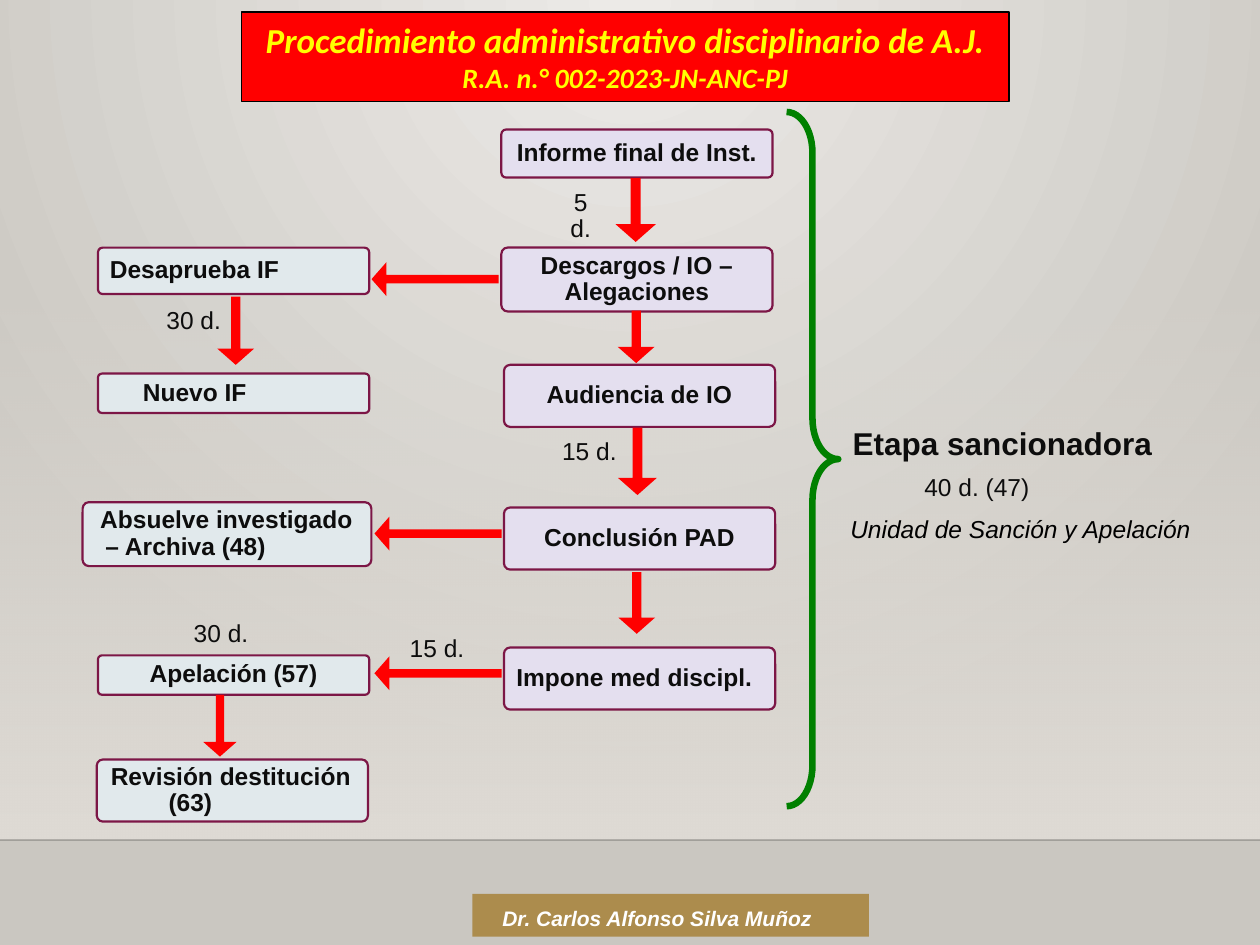
from lxml import etree
from pptx import Presentation
from pptx import util as u
from pptx.dml.color import RGBColor
from pptx.enum import shapes, text
from pptx.oxml.ns import qn

Pt = u.Pt
KIND = shapes.MSO_SHAPE
ALIGN = text.PP_ALIGN
COLORS = {
    "light": "ECEAE7", "dark": "CAC7C1", "floor": "DFDBD5", "black": "000000",
    "main": "E4DFEF", "branch": "E1E9EC", "border": "7C1646", "red": "FF0000",
    "yellow": "FFFF00", "green": "008000", "ink": "0D0D0D", "gold": "996600",
    "white": "FFFFFF",
}
RGB = {name: RGBColor.from_string(value) for name, value in COLORS.items()}

presentation = Presentation()
presentation.slide_width, presentation.slide_height = Pt(720), Pt(540)
slide = presentation.slides.add_slide(presentation.slide_layouts[6])


def add_shape(kind, frame, fill=None, line=None, width=1, adjustments=(), rotation=0):
    shape = slide.shapes.add_shape(kind, *map(Pt, frame))
    shape.shadow.inherit = False
    shape.rotation = rotation
    for index, value in enumerate(adjustments):
        shape.adjustments[index] = value
    if fill:
        shape.fill.solid()
        shape.fill.fore_color.rgb = RGB[fill]
    else:
        shape.fill.background()
    if line:
        shape.line.color.rgb = RGB[line]
        shape.line.width = Pt(width)
    else:
        shape.line.fill.background()
    return shape


def write(shape, content, size=14, font="Arial", color="ink", bold=False, italic=False,
          align=ALIGN.CENTER, spacing=0.9, anchor=text.MSO_ANCHOR.TOP, wrap=True,
          insets=(7.2, 3.6, 7.2, 3.6), left=0, first=0):
    """Fill the shape with one paragraph per line; size may be a list, one per line."""
    frame = shape.text_frame
    frame.word_wrap = wrap
    frame.vertical_anchor = anchor
    (frame.margin_left, frame.margin_top,
     frame.margin_right, frame.margin_bottom) = map(Pt, insets)
    lines = content.split("\n")
    sizes = size if isinstance(size, list) else [size] * len(lines)
    for index, (line, points) in enumerate(zip(lines, sizes)):
        paragraph = frame.paragraphs[0] if index == 0 else frame.add_paragraph()
        properties = paragraph._p.get_or_add_pPr()
        properties.set("marL", str(int(Pt(left))))
        properties.set("indent", str(int(Pt(first))))
        paragraph.alignment = align
        paragraph.line_spacing = spacing
        run = paragraph.add_run()
        run.text = line
        run.font.size, run.font.name = Pt(points), font
        run.font.bold, run.font.italic = bold, italic
        run.font.color.rgb = RGB[color]


# Backdrop: radial glow, a floor that fades in, and the floor line
background = slide.background.fill
background.gradient()
for stop, name in zip(background.gradient_stops, ("light", "dark")):
    stop.color.rgb = RGB[name]
gradient = slide._element.find(".//" + qn("a:gradFill"))
gradient.remove(gradient.find(qn("a:lin")))
path = etree.SubElement(gradient, qn("a:path"), {"path": "circle"})
etree.SubElement(path, qn("a:fillToRect"),
                 {"l": "43000", "t": "0", "r": "43000", "b": "100000"})

floor = add_shape(KIND.RECTANGLE, (0, 158.5, 720, 321.5))
floor.fill.gradient()
floor.fill.gradient_angle = 270
for stop in floor.fill.gradient_stops:
    stop.color.rgb = RGB["floor"]

floor_line = slide.shapes.add_connector(shapes.MSO_CONNECTOR.STRAIGHT,
                                        Pt(0), Pt(480), Pt(720), Pt(480))
floor_line.line.color.rgb = RGB["black"]
floor_line.line.width = Pt(1)
etree.SubElement(floor_line._element.spPr, qn("a:effectLst"))

# Title and signature
title = add_shape(KIND.RECTANGLE, (138, 7, 438.5, 51), "red", "black")
write(title, "Procedimiento administrativo disciplinario de A.J.\nR.A. n.° 002-2023-JN-ANC-PJ",
      size=[20, 16], font="Calibri", color="yellow", bold=True, italic=True, spacing=1)
signature = add_shape(KIND.RECTANGLE, (270, 510.8, 226.6, 24.5), "gold")
write(signature, "Dr. Carlos Alfonso Silva Muñoz", size=12, color="white", bold=True,
      italic=True, align=ALIGN.JUSTIFY, spacing=1.2, left=10)

for element, percent in ((floor, 0), (floor_line, 20), (signature, 60)):
    color = element._element.spPr.find(".//" + qn("a:srgbClr"))
    etree.SubElement(color, qn("a:alpha"), {"val": str(percent * 1000)})

# Steps: frame, fill, text, paragraph format
LEFT = ALIGN.LEFT
steps = [
    ((286.5, 74, 155, 27.5), "main", "Informe final de Inst.", {}),
    ((286.5, 141.5, 155, 36.5), "main", "Descargos / IO – Alegaciones", {}),
    ((288, 208.5, 155, 35.5), "main", "Audiencia de IO", {}),
    ((288, 290, 155, 35.5), "main", "Conclusión PAD", {}),
    ((288, 370, 155, 35.5), "main", "Impone med discipl.", {"align": LEFT}),
    ((56, 141.5, 155, 26.5), "branch", "Desaprueba IF", {"align": LEFT}),
    ((56, 213.5, 155, 22.5), "branch", "Nuevo IF", {"align": LEFT, "left": 19}),
    ((47.2, 287, 165, 36.5), "branch", "Absuelve investigado – Archiva (48)",
     {"align": LEFT, "left": 6, "first": -3}),
    ((56, 374.5, 155, 22.5), "branch", "Apelación (57)", {}),
    ((55.3, 434, 155, 35.5), "branch", "Revisión destitución (63)",
     {"align": LEFT, "left": 34, "first": -33}),
]
for frame, fill, content, options in steps:
    step = add_shape(KIND.ROUNDED_RECTANGLE, frame, fill, "border", 1.25, [0.1])
    write(step, content, bold=True, anchor=text.MSO_ANCHOR.MIDDLE,
          insets=(6, 4, 6, 4), **options)

# Arrows: frame before rotation, grouped by direction
arrows = {
    90: [(345, 108.5, 36.5, 23), (348.5, 182, 30, 21), (345, 252.5, 38.5, 22.3),
         (346.2, 334, 35.3, 21), (115.2, 178.5, 39, 21), (108, 405.2, 35.3, 19)],
    180: [(212.3, 149.8, 72.7, 19.4), (214, 295.2, 72.7, 19.4), (214, 375, 72.7, 19.4)],
}
for rotation, frames in arrows.items():
    for frame in frames:
        add_shape(KIND.RIGHT_ARROW, frame, "red", adjustments=(0.25, 0.44),
                  rotation=rotation)

add_shape(KIND.LEFT_BRACE, (449.5, 64, 29.5, 396.7), line="green", width=3.75,
          adjustments=(0.79, 0.5), rotation=180)

# Terms and stage caption
CENTERED = {"wrap": False}
SHIFTED = {"wrap": False, "insets": (7.2, 3.6, 11, 3.6)}
labels = [
    ((314, 105, 39.6, 22.3), "5 d.", SHIFTED),
    ((312.5, 247.7, 52.6, 22.3), "15 d.", SHIFTED),
    ((225.4, 360, 52.6, 22.3), "15 d.", SHIFTED),
    ((102, 351.4, 52.6, 22.3), "30 d.", SHIFTED),
    ((87, 172.8, 47.5, 22.3), "30 d.", CENTERED),
    ((516.2, 267.8, 84.2, 22.3), "40 d. (47)", CENTERED),
    ((480.2, 239, 198, 29), "Etapa sancionadora",
     {"size": 18, "bold": True, "align": LEFT, "spacing": 1}),
    ((478.8, 290.2, 221.8, 24.5), "Unidad de Sanción y Apelación",
     {"color": "black", "italic": True, "align": LEFT, "spacing": 1}),
]
for frame, content, options in labels:
    write(slide.shapes.add_textbox(*map(Pt, frame)), content, **options)

presentation.save("out.pptx")
